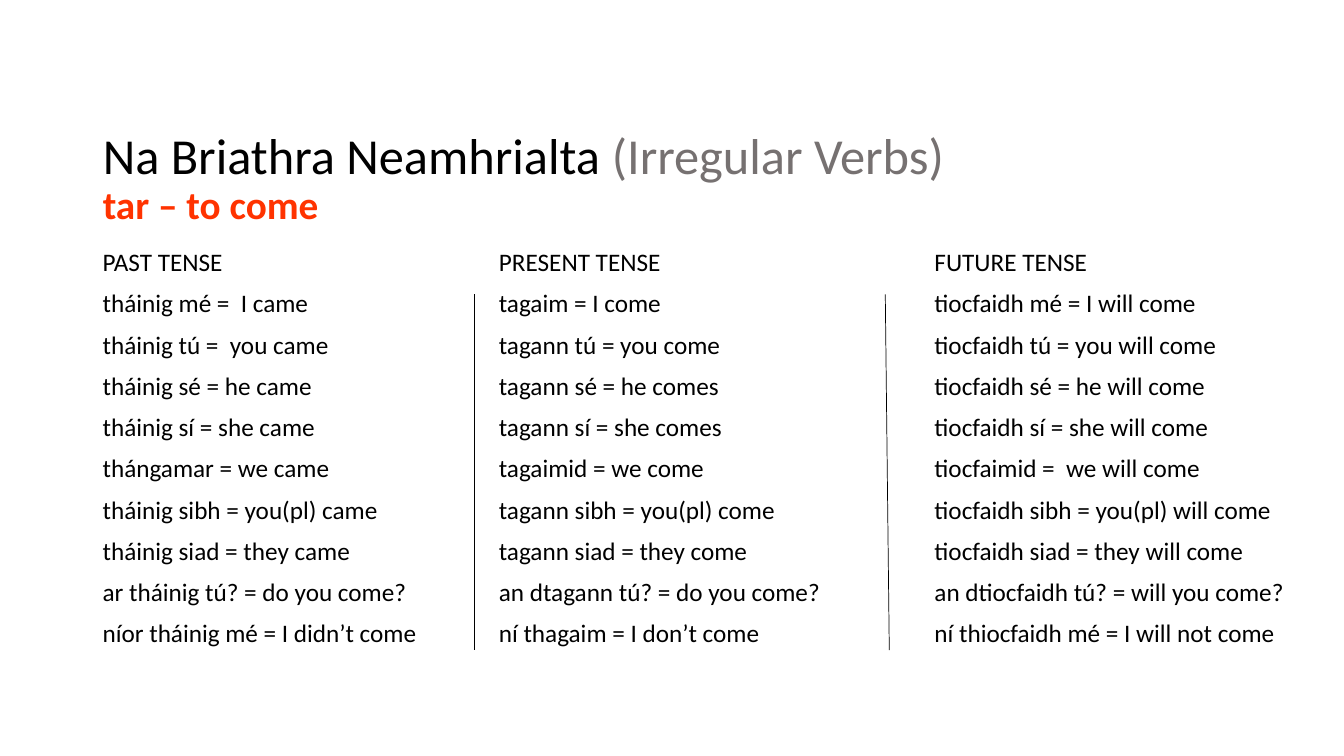
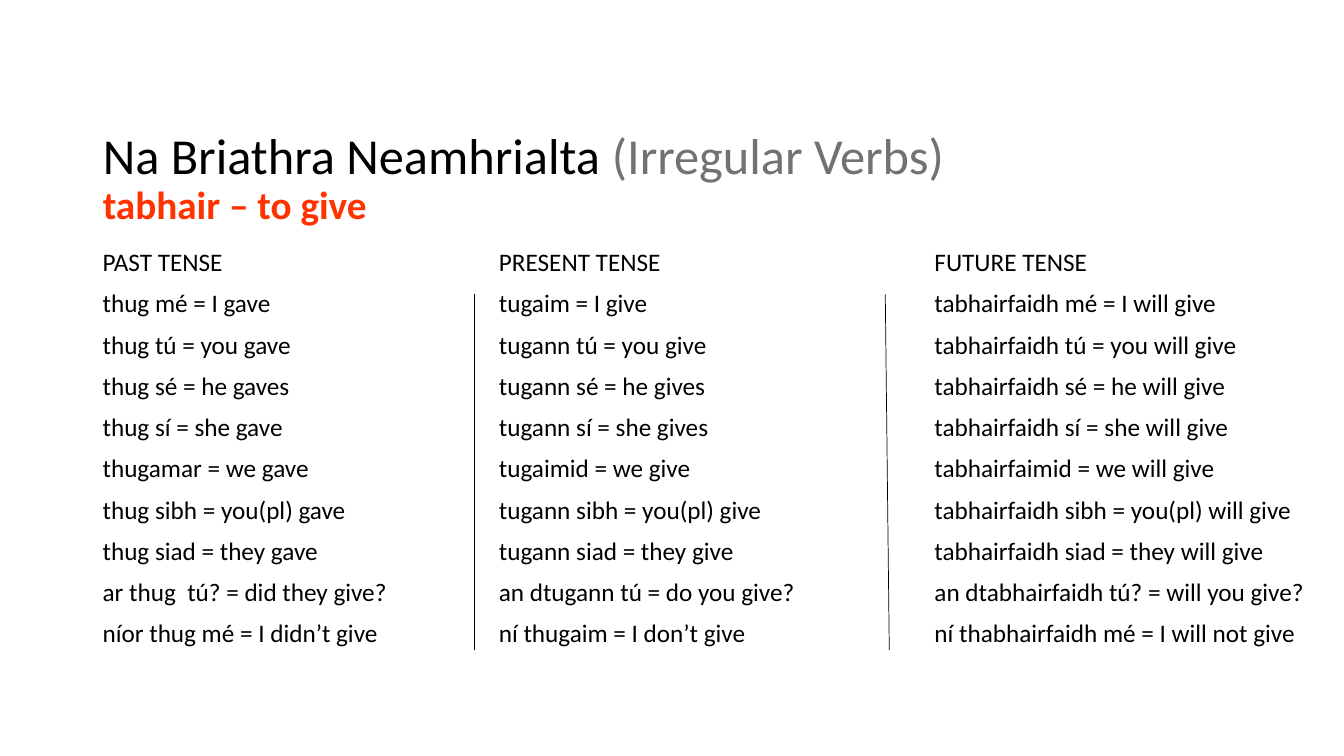
"""Build two slides of Irish irregular verbs in three tenses."""
import pptx
import pptx.util
import pptx.dml.color
import pptx.enum.shapes
import pptx.enum.text
import lxml.etree

THEME = {
    "font": "Calibri",
    "ink": "000000", "gray": "767171", "red": "FF3300",
    "head": 36, "verb": 28, "body": 18, "rule": 0.5,
    "lead": 0.9, "gap": 10,
}

VERBS = {
    "tar – to come": [
        ["PAST TENSE", "tháinig mé =  I came", "tháinig tú =  you came",
         "tháinig sé = he came", "tháinig sí = she came",
         "thángamar = we came", "tháinig sibh = you(pl) came",
         "tháinig siad = they came", "ar tháinig tú? = do you come?",
         "níor tháinig mé = I didn’t come"],
        ["PRESENT TENSE", "tagaim = I come", "tagann tú = you come",
         "tagann sé = he comes", "tagann sí = she comes",
         "tagaimid = we come", "tagann sibh = you(pl) come",
         "tagann siad = they come", "an dtagann tú? = do you come?",
         "ní thagaim = I don’t come"],
        ["FUTURE TENSE", "tiocfaidh mé = I will come",
         "tiocfaidh tú = you will come", "tiocfaidh sé = he will come",
         "tiocfaidh sí = she will come", "tiocfaimid =  we will come",
         "tiocfaidh sibh = you(pl) will come",
         "tiocfaidh siad = they will come",
         "an dtiocfaidh tú? = will you come?",
         "ní thiocfaidh mé = I will not come"],
    ],
    "tabhair – to give": [
        ["PAST TENSE", "thug mé = I gave", "thug tú = you gave",
         "thug sé = he gaves", "thug sí = she gave", "thugamar = we gave",
         "thug sibh = you(pl) gave", "thug siad = they gave",
         "ar thug  tú? = did they give?", "níor thug mé = I didn’t give"],
        ["PRESENT TENSE", "tugaim = I give", "tugann tú = you give",
         "tugann sé = he gives", "tugann sí = she gives",
         "tugaimid = we give", "tugann sibh = you(pl) give",
         "tugann siad = they give", "an dtugann tú = do you give?",
         "ní thugaim = I don’t give"],
        ["FUTURE TENSE", "tabhairfaidh mé = I will give",
         "tabhairfaidh tú = you will give", "tabhairfaidh sé = he will give",
         "tabhairfaidh sí = she will give", "tabhairfaimid = we will give",
         "tabhairfaidh sibh = you(pl) will give",
         "tabhairfaidh siad = they will give",
         "an dtabhairfaidh tú? = will you give?",
         "ní thabhairfaidh mé = I will not give"],
    ],
}

deck = pptx.Presentation()
deck.slide_width = pptx.util.Inches(13.33)
deck.slide_height = pptx.util.Inches(7.5)
COL = deck.slide_width / 100
ROW = deck.slide_height / 100

TITLE = (6.9, 16.67, 91.4, 15.73)
TENSES = [(6.9, 26.8), (36.38, 29.48), (68.79, 29.48)]
TOP, DEPTH = 32.4, 55.6
RULES = [(35.26, 35.26), (65.87, 66.17)]
START, END = 38.93, 86


def write(para, text, size="body", color="ink", bold=False, gap=0):
    """Add a run of text to a paragraph in the theme's style."""
    para.alignment = pptx.enum.text.PP_ALIGN.LEFT
    para.line_spacing = THEME["lead"]
    para.space_before = pptx.util.Pt(gap)
    run = para.add_run()
    run.text = text
    run.font.name = THEME["font"]
    run.font.size = pptx.util.Pt(THEME[size])
    run.font.bold = bold
    run.font.color.rgb = pptx.dml.color.RGBColor.from_string(THEME[color])


def place(left, top, width, height):
    """Turn grid columns and rows into slide lengths."""
    return [round(n) for n in (left * COL, top * ROW, width * COL, height * ROW)]


for verb, tenses in VERBS.items():
    slide = deck.slides.add_slide(deck.slide_layouts[5])

    title = slide.shapes.title
    title.left, title.top, title.width, title.height = place(*TITLE)
    frame = title.text_frame
    frame.auto_size = pptx.enum.text.MSO_AUTO_SIZE.NONE
    frame.vertical_anchor = pptx.enum.text.MSO_ANCHOR.TOP
    para = frame.paragraphs[0]
    write(para, "Na Briathra Neamhrialta ", size="head")
    write(para, "(Irregular Verbs)", size="head", color="gray")
    para.add_line_break()
    write(para, verb, size="verb", color="red", bold=True)

    for (left, width), lines in zip(TENSES, tenses):
        frame = slide.shapes.add_textbox(*place(left, TOP, width, DEPTH)).text_frame
        frame.word_wrap = True
        for row, text in enumerate(lines):
            para = frame.add_paragraph() if row else frame.paragraphs[0]
            write(para, text, gap=THEME["gap"] if row else 0)

    for head, foot in RULES:
        rule = slide.shapes.add_connector(
            pptx.enum.shapes.MSO_CONNECTOR.STRAIGHT, *place(head, START, foot, END))
        rule.line.width = pptx.util.Pt(THEME["rule"])
        rule.line.color.rgb = pptx.dml.color.RGBColor.from_string(THEME["ink"])
        lxml.etree.SubElement(
            rule.element.spPr,
            "{http://schemas.openxmlformats.org/drawingml/2006/main}effectLst")

deck.save("out.pptx")
